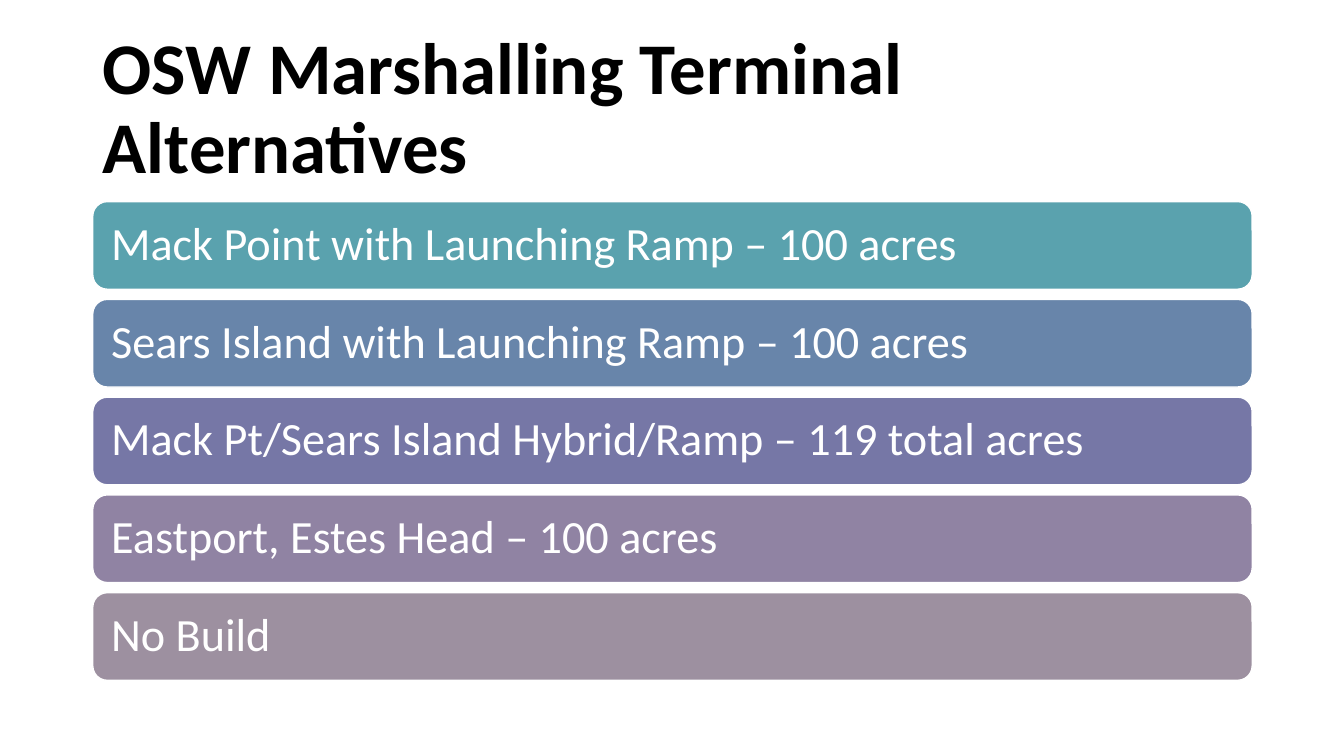
from dataclasses import dataclass

from pptx import Presentation
from pptx.dml.color import RGBColor
from pptx.enum.shapes import MSO_SHAPE
from pptx.enum.text import MSO_ANCHOR, MSO_AUTO_SIZE, PP_ALIGN
from pptx.util import Inches, Pt


@dataclass(frozen=True)
class Theme:
    """Hold the colours, font and type sizes of the slide."""
    font: str = "Calibri"
    ink: str = "000000"
    paper: str = "FFFFFF"
    head: int = 52
    item: int = 33
    bars: tuple = ("5AA2AE", "6885AA", "7677A6", "9083A3", "9D90A0")


THEME = Theme()
TITLE = "OSW Marshalling Terminal Alternatives"
SITES = (
    "Mack Point with Launching Ramp – 100 acres",
    "Sears Island with Launching Ramp – 100 acres",
    "Mack Pt/Sears Island Hybrid/Ramp – 119 total acres",
    "Eastport, Estes Head – 100 acres",
    "No Build",
)


def apply(item, values):
    """Set each named attribute of an item."""
    for name, value in values.items():
        setattr(item, name, value)


def write(shape, text, size, color, bold, inset):
    """Fill a shape with one left-aligned paragraph, centred in height."""
    frame = shape.text_frame
    frame.text = text
    apply(frame, {
        "word_wrap": True,
        "auto_size": MSO_AUTO_SIZE.NONE,
        "vertical_anchor": MSO_ANCHOR.MIDDLE,
        "margin_left": Inches(inset),
        "margin_right": Inches(inset),
    })
    line = frame.paragraphs[0]
    apply(line, {"alignment": PP_ALIGN.LEFT, "line_spacing": 0.9})
    apply(line.font, {"name": THEME.font, "size": Pt(size), "bold": bold})
    line.font.color.rgb = RGBColor.from_string(color)


def add_title(slide, left, top, width, height):
    """Place the slide title in its box."""
    title = slide.shapes.title
    apply(title, {
        "left": Inches(left), "top": Inches(top),
        "width": Inches(width), "height": Inches(height),
    })
    write(title, TITLE, THEME.head, THEME.ink, True, 0.1)


def add_bars(slide, left, top, width, height, gap=0.1):
    """Stack one rounded bar per site, evenly spaced in the box."""
    tall = (height - gap * (len(SITES) - 1)) / len(SITES)
    for row, (site, color) in enumerate(zip(SITES, THEME.bars)):
        bar = slide.shapes.add_shape(
            MSO_SHAPE.ROUNDED_RECTANGLE, Inches(left),
            Inches(top + row * (tall + gap)), Inches(width), Inches(tall))
        bar.shadow.inherit = False
        bar.fill.solid()
        bar.fill.fore_color.rgb = RGBColor.from_string(color)
        bar.line.color.rgb = RGBColor.from_string(THEME.paper)
        bar.line.width = Pt(1)
        write(bar, site, THEME.item, THEME.paper, False, 0.14)


def main():
    """Build and save the slide."""
    deck = Presentation()
    apply(deck, {"slide_width": Inches(13.33), "slide_height": Inches(7.5)})
    slide = deck.slides.add_slide(deck.slide_layouts[5])
    add_title(slide, 0.92, 0.34, 11.5, 1.51)
    add_bars(slide, 0.92, 2, 11.5, 4.75)
    deck.save("out.pptx")


if __name__ == "__main__":
    main()
